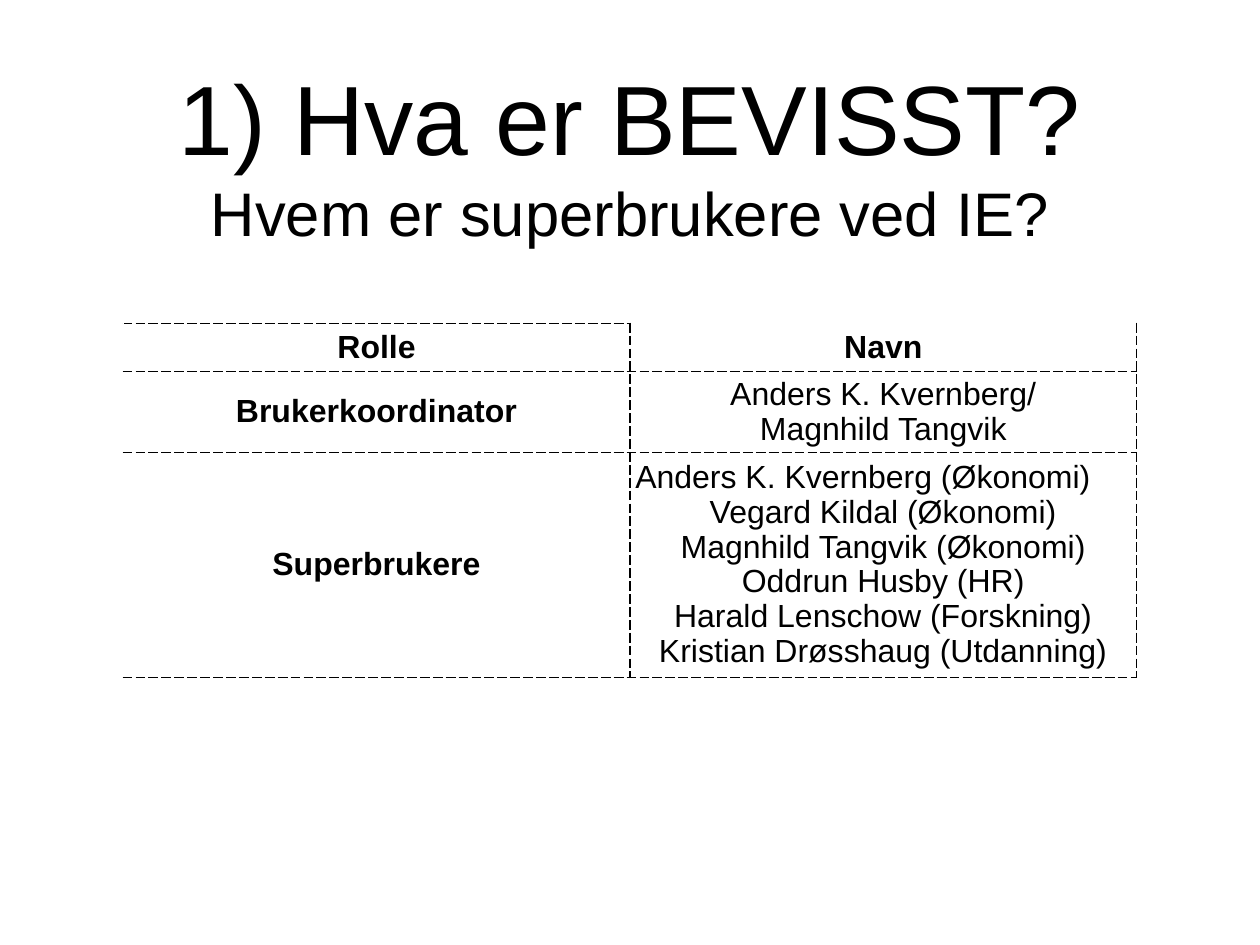
from dataclasses import dataclass

from lxml.etree import SubElement as Sub
from pptx import Presentation
from pptx.dml.color import RGBColor as Rgb
from pptx.enum.text import MSO_ANCHOR as Anchor, MSO_AUTO_SIZE as Fit, PP_ALIGN as Align
from pptx.oxml.ns import qn
from pptx.util import Inches, Pt

INK = {"text": "000000", "line": "000000"}
FACE = "Arial"
PAD = Inches(0.06)


@dataclass
class Line:
    text: str
    size: int = 26
    bold: bool = False
    align: Align = Align.CENTER
    space: float = 0.97


@dataclass
class Row:
    height: float
    role: Line
    names: list[Line]


TITLE = [
    Line("1) Hva er BEVISST?", 80, space=1),
    Line("Hvem er superbrukere ved IE?", 50, space=1),
]
ROWS = [
    Row(0.55, Line("Rolle", bold=True), [Line("Navn", bold=True)]),
    Row(0.91, Line("Brukerkoordinator", bold=True),
        [Line("Anders K. Kvernberg/"), Line("Magnhild Tangvik")]),
    Row(2.54, Line("Superbrukere", bold=True), [
        Line("Anders K. Kvernberg (Økonomi)", align=Align.LEFT),
        Line("Vegard Kildal (Økonomi)"),
        Line("Magnhild Tangvik (Økonomi)"),
        Line("Oddrun Husby (HR)"),
        Line("Harald Lenschow (Forskning)"),
        Line("Kristian Drøsshaug (Utdanning)"),
    ]),
]


def write(frame, lines: list[Line]) -> None:
    """Fill a text frame with one paragraph per line."""
    for i, line in enumerate(lines):
        para = frame.add_paragraph() if i else frame.paragraphs[0]
        para.text = line.text
        para.alignment = line.align
        para.line_spacing = line.space
        para.space_before = Pt(0)
        font = para.font
        font.name, font.size, font.bold = FACE, Pt(line.size), line.bold
        font.color.rgb = Rgb.from_string(INK["text"])


def border(cell, sides: str) -> None:
    """Draw dashed edges on the named sides, in L, R, T, B order."""
    props = cell._tc.get_or_add_tcPr()
    for i, side in enumerate(sides):
        edge = Sub(props, qn(f"a:ln{side}"), w=str(Pt(1)))
        fill = Sub(edge, qn("a:solidFill"))
        Sub(fill, qn("a:srgbClr"), val=INK["line"])
        Sub(edge, qn("a:prstDash"), val="lgDash")
        props.insert(i, edge)


def fill_cell(cell, lines: list[Line], sides: str) -> None:
    cell.fill.background()
    cell.vertical_anchor = Anchor.MIDDLE
    cell.margin_left = cell.margin_right = PAD
    cell.margin_top = cell.margin_bottom = PAD
    write(cell.text_frame, lines)
    border(cell, sides)


def main() -> None:
    deck = Presentation()
    deck.slide_width, deck.slide_height = Inches(14.22), Inches(10.67)
    slide = deck.slides.add_slide(deck.slide_layouts[5])

    # Title
    title = slide.shapes.title
    title.left, title.top = Inches(1.04), Inches(0.55)
    title.width, title.height = Inches(12.14), Inches(2.36)
    frame = title.text_frame
    frame.margin_left = frame.margin_right = 0
    frame.margin_top = frame.margin_bottom = 0
    frame.vertical_anchor = Anchor.MIDDLE
    frame.auto_size = Fit.NONE
    frame.word_wrap = True
    write(frame, TITLE)

    # Table of roles
    tall = sum(row.height for row in ROWS)
    grid = slide.shapes.add_table(len(ROWS), 2, Inches(1.39), Inches(3.65),
                                  Inches(11.44), Inches(tall)).table
    grid.first_row = grid.horz_banding = False
    for i, row in enumerate(ROWS):
        grid.rows[i].height = Inches(row.height)
        fill_cell(grid.cell(i, 0), [row.role], "RTB")
        fill_cell(grid.cell(i, 1), row.names, "LRTB" if i else "LRB")

    deck.save("out.pptx")


if __name__ == "__main__":
    main()
